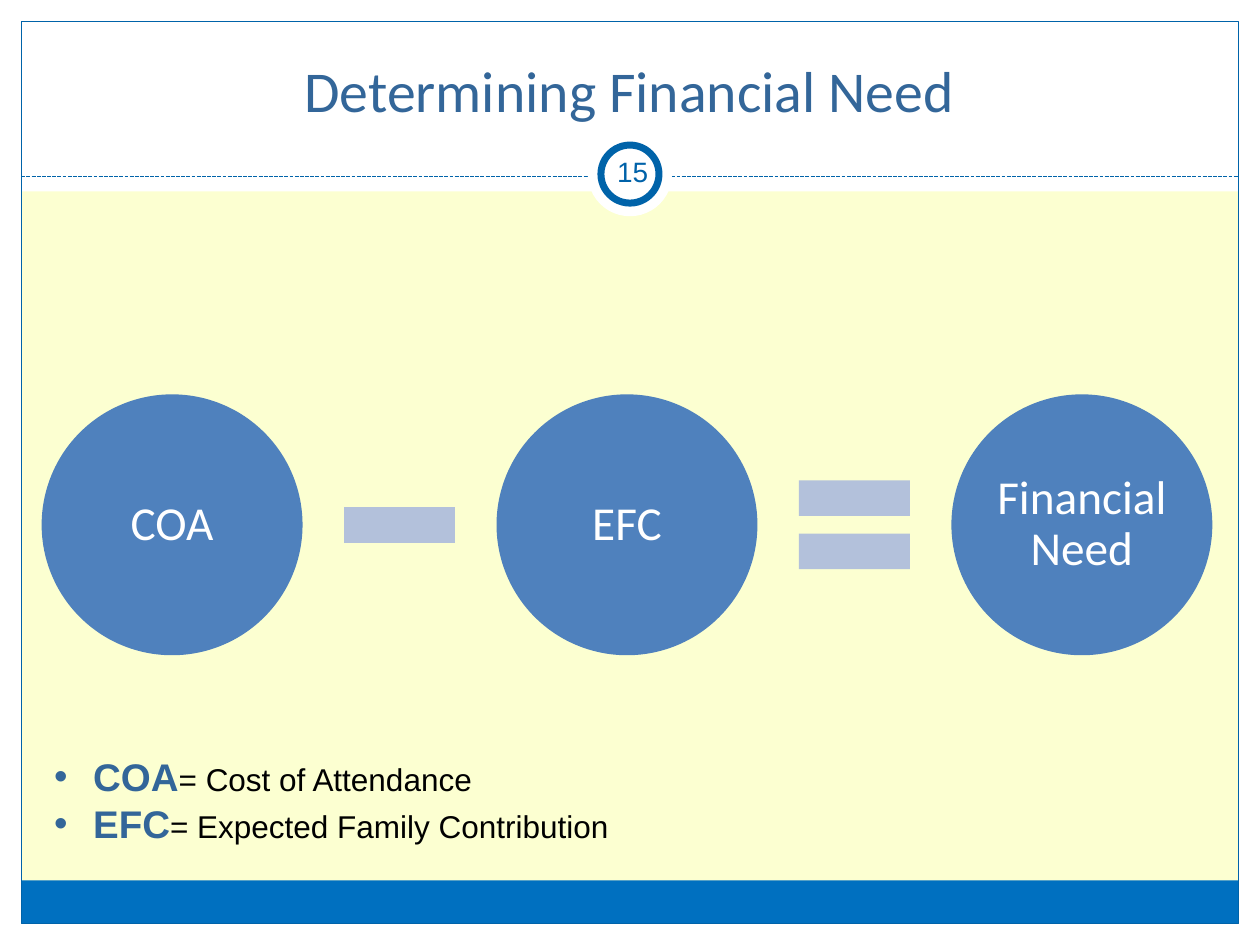
"""Build the slide that explains how financial need is determined."""
from lxml import etree
from pptx import Presentation
from pptx import util as u
from pptx.dml.color import RGBColor
from pptx.enum import dml, shapes, text
from pptx.oxml import ns

WHITE = RGBColor(0xFF, 0xFF, 0xFF)
BLACK = RGBColor(0x00, 0x00, 0x00)
CREAM = RGBColor(0xFC, 0xFF, 0xD1)
FOOTER_BLUE = RGBColor(0x00, 0x70, 0xC0)
FRAME_BLUE = RGBColor(0x00, 0x63, 0xA9)
NUMBER_BLUE = RGBColor(0x00, 0x62, 0xA9)
TITLE_BLUE = RGBColor(0x33, 0x66, 0x99)
CIRCLE_BLUE = RGBColor(0x4F, 0x81, 0xBD)
OPERATOR_BLUE = RGBColor(0xB3, 0xC1, 0xDB)

WIDTH, HEIGHT, MARGIN = 25.4, 19.05, 0.43
INNER_WIDTH = WIDTH - 2 * MARGIN
INNER_HEIGHT = HEIGHT - 2 * MARGIN
BADGE_CENTER = (WIDTH / 2, 3.51)
CIRCLE, OPERATOR, GAP = 5.26, 3.05, 0.43
EQUATION_LEFT, EQUATION_MIDDLE = 0.84, 10.58

KINDS = shapes.MSO_SHAPE
EQUATION = [
    (KINDS.OVAL, "COA"),
    (KINDS.MATH_MINUS, None),
    (KINDS.OVAL, "EFC"),
    (KINDS.MATH_EQUAL, None),
    (KINDS.OVAL, "Financial Need"),
]
DEFINITIONS = [
    ("COA", "= Cost of Attendance"),
    ("EFC", "= Expected Family Contribution"),
]


class SlideBuilder:
    """Holds the text styles and the slide being drawn."""

    styles = {
        "title": {"name": "Calibri", "size": u.Pt(33), "bold": False, "color": TITLE_BLUE},
        "number": {"name": "Arial", "size": u.Pt(16), "bold": False, "color": NUMBER_BLUE},
        "circle": {"name": "Calibri", "size": u.Pt(27), "bold": False, "color": WHITE},
        "term": {"name": "Arial", "size": u.Pt(22), "bold": True, "color": TITLE_BLUE},
        "meaning": {"name": "Arial", "size": u.Pt(18), "bold": False, "color": BLACK},
    }

    def __init__(self, slide):
        self.slide = slide
        slide.background.fill.solid()
        slide.background.fill.fore_color.rgb = CREAM

    def add_run(self, paragraph, words, style):
        run = paragraph.add_run()
        run.text = words
        for key, value in self.styles[style].items():
            if key == "color":
                run.font.color.rgb = value
            else:
                setattr(run.font, key, value)

    def format_frame(self, frame, inset=0.25, anchor=text.MSO_ANCHOR.MIDDLE):
        values = {"word_wrap": True, "auto_size": text.MSO_AUTO_SIZE.NONE, "vertical_anchor": anchor}
        for side in ("left", "right", "top", "bottom"):
            values[f"margin_{side}"] = u.Cm(inset)
        for key, value in values.items():
            setattr(frame, key, value)

    def write_centered(self, frame, words, style, spacing=1.0):
        paragraph = frame.paragraphs[0]
        paragraph.alignment = text.PP_ALIGN.CENTER
        paragraph.line_spacing = spacing
        self.add_run(paragraph, words, style)

    def add_title(self, words, box):
        title = self.slide.shapes.title
        for key, value in zip(("left", "top", "width", "height"), box):
            setattr(title, key, u.Cm(value))
        self.format_frame(title.text_frame, 0.25, text.MSO_ANCHOR.BOTTOM)
        self.write_centered(title.text_frame, words, "title")
        self.slide.shapes._spTree.append(title._element)

    def add_shape(self, kind, box, fill=None, line=None, weight=0.75):
        shape = self.slide.shapes.add_shape(kind, *map(u.Cm, box))
        shape.shadow.inherit = False
        for target, color in ((shape.fill, fill), (shape.line.fill, line)):
            if color is None:
                target.background()
            else:
                target.solid()
                target.fore_color.rgb = color
        if line is not None:
            shape.line.width = u.Pt(weight)
        return shape

    def add_disc(self, center, diameter, fill, line=None, weight=0.75):
        left, top = (value - diameter / 2 for value in center)
        return self.add_shape(KINDS.OVAL, (left, top, diameter, diameter), fill, line, weight)

    def add_divider(self, top):
        points = (MARGIN, top, WIDTH - MARGIN, top)
        divider = self.slide.shapes.add_connector(shapes.MSO_CONNECTOR.STRAIGHT, *map(u.Cm, points))
        divider.line.color.rgb = FRAME_BLUE
        divider.line.width = u.Pt(0.75)
        divider.line.dash_style = dml.MSO_LINE.SQUARE_DOT
        etree.SubElement(divider._element.spPr, ns.qn("a:effectLst"))

    def add_number(self, words, box):
        frame = self.slide.shapes.add_textbox(*map(u.Cm, box)).text_frame
        self.format_frame(frame, 0.13)
        self.write_centered(frame, words, "number")

    def add_equation(self, parts):
        left = EQUATION_LEFT
        for kind, words in parts:
            size, fill = (CIRCLE, CIRCLE_BLUE) if words else (OPERATOR, OPERATOR_BLUE)
            shape = self.add_shape(kind, (left, EQUATION_MIDDLE - size / 2, size, size), fill)
            if words:
                self.format_frame(shape.text_frame, 0.1)
                self.write_centered(shape.text_frame, words, "circle", 0.9)
            left += size + GAP

    def add_definitions(self, definitions, box):
        frame = self.slide.shapes.add_textbox(*map(u.Cm, box)).text_frame
        self.format_frame(frame, 0.25, text.MSO_ANCHOR.TOP)
        frame.margin_top = frame.margin_bottom = u.Cm(0.13)
        for index, (term, meaning) in enumerate(definitions):
            paragraph = frame.add_paragraph() if index else frame.paragraphs[0]
            properties = paragraph._p.get_or_add_pPr()
            properties.set("marL", str(u.Cm(0.79)))
            properties.set("indent", str(-u.Cm(0.79)))
            etree.SubElement(properties, ns.qn("a:buFont"), typeface="Arial")
            etree.SubElement(properties, ns.qn("a:buChar"), char="•")
            self.add_run(paragraph, term, "term")
            self.add_run(paragraph, meaning, "meaning")


def main():
    presentation = Presentation()
    presentation.slide_width, presentation.slide_height = u.Cm(WIDTH), u.Cm(HEIGHT)
    builder = SlideBuilder(presentation.slides.add_slide(presentation.slide_layouts[5]))

    borders = [
        (0, HEIGHT - MARGIN, WIDTH, MARGIN),
        (0, 0, WIDTH, 3.86),
        (0, 0, MARGIN, HEIGHT),
        (WIDTH - MARGIN, 0, MARGIN, HEIGHT),
    ]
    for box in borders:
        builder.add_shape(KINDS.RECTANGLE, box, WHITE)
    builder.add_shape(KINDS.RECTANGLE, (MARGIN, 17.75, INNER_WIDTH, 0.87), FOOTER_BLUE)
    builder.add_shape(KINDS.RECTANGLE, (MARGIN, MARGIN, INNER_WIDTH, INNER_HEIGHT), line=FRAME_BLUE)
    builder.add_divider(3.56)
    builder.add_disc(BADGE_CENTER, 1.7, WHITE)
    builder.add_disc(BADGE_CENTER, 1.17, WHITE, FRAME_BLUE, 4)

    builder.add_title("Determining Financial Need", (0.84, 0.64, 23.7, 2.11))
    builder.add_number("15", (12.12, 2.84, 1.27, 1.22))
    builder.add_equation(EQUATION)
    builder.add_definitions(DEFINITIONS, (0.84, 15.06, 12.7, 2.13))
    presentation.save("out.pptx")


if __name__ == "__main__":
    main()
